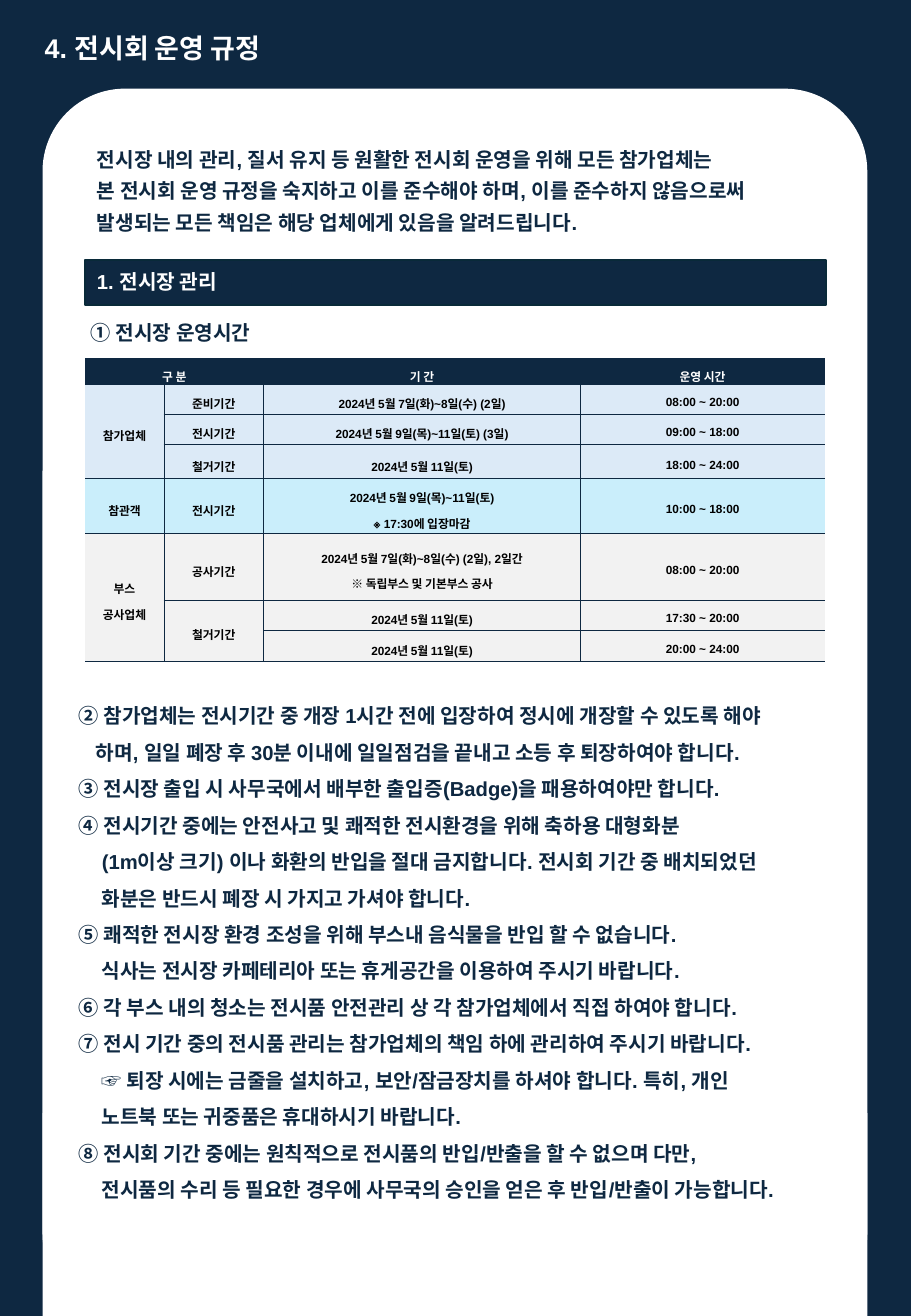
import pptx
import pptx.dml.color
import pptx.enum.shapes
import pptx.enum.text
import pptx.oxml
import pptx.oxml.ns
import pptx.util

Inches = pptx.util.Inches
Shape = pptx.enum.shapes.MSO_SHAPE
COLORS = {
    "navy": "0E2841",
    "bar_line": "092A39",
    "white": "FFFFFF",
    "black": "000000",
    "exhibitor": "DCEAF7",
    "visitor": "CAEEFB",
    "builder": "F2F2F2",
}
INTRO = [
    "전시장 내의 관리, 질서 유지 등 원활한 전시회 운영을 위해 모든 참가업체는",
    "본 전시회 운영 규정을 숙지하고 이를 준수해야 하며, 이를 준수하지 않음으로써",
    "발생되는 모든 책임은 해당 업체에게 있음을 알려드립니다.",
]
RULES = [
    ("② 참가업체는 전시기간 중 개장 1시간 전에 입장하여 정시에 개장할 수 있도록 해야", 0),
    ("하며, 일일 폐장 후 30분 이내에 일일점검을 끝내고 소등 후 퇴장하여야 합니다.", 0.14),
    ("③ 전시장 출입 시 사무국에서 배부한 출입증(Badge)을 패용하여야만 합니다.", 0),
    ("④ 전시기간 중에는 안전사고 및 쾌적한 전시환경을 위해 축하용 대형화분", 0),
    ("(1m이상 크기) 이나 화환의 반입을 절대 금지합니다. 전시회 기간 중 배치되었던", 0.19),
    ("화분은 반드시 폐장 시 가지고 가셔야 합니다.", 0.19),
    ("⑤ 쾌적한 전시장 환경 조성을 위해 부스내 음식물을 반입 할 수 없습니다.", 0),
    ("식사는 전시장 카페테리아 또는 휴게공간을 이용하여 주시기 바랍니다.", 0.19),
    ("⑥ 각 부스 내의 청소는 전시품 안전관리 상 각 참가업체에서 직접 하여야 합니다.", 0),
    ("⑦ 전시 기간 중의 전시품 관리는 참가업체의 책임 하에 관리하여 주시기 바랍니다.", 0),
    ("☞ 퇴장 시에는 금줄을 설치하고, 보안/잠금장치를 하셔야 합니다. 특히, 개인", 0.19),
    ("노트북 또는 귀중품은 휴대하시기 바랍니다.", 0.19),
    ("⑧ 전시회 기간 중에는 원칙적으로 전시품의 반입/반출을 할 수 없으며 다만,", 0),
    ("전시품의 수리 등 필요한 경우에 사무국의 승인을 얻은 후 반입/반출이 가능합니다.", 0.19),
]
COLUMN_WIDTHS = [0.65, 0.82, 2.61, 2.01]
ROW_HEIGHTS = [0.21, 0.25, 0.25, 0.28, 0.45, 0.55, 0.25, 0.25]
ROW_FILLS = ["navy"] + ["exhibitor"] * 3 + ["visitor"] + ["builder"] * 3
MERGES = [((0, 0), (0, 1)), ((1, 0), (3, 0)), ((5, 0), (7, 0)), ((6, 1), (7, 1))]
SCHEDULE = [
    ["구 분", "", "기 간", "운영 시간"],
    ["참가업체", "준비기간", "2024년 5월 7일(화)~8일(수) (2일)", "08:00 ~ 20:00"],
    ["", "전시기간", "2024년 5월 9일(목)~11일(토) (3일)", "09:00 ~ 18:00"],
    ["", "철거기간", "2024년 5월 11일(토)", "18:00 ~ 24:00"],
    ["참관객", "전시기간", "2024년 5월 9일(목)~11일(토)\n※ 17:30에 입장마감", "10:00 ~ 18:00"],
    ["부스\n공사업체", "공사기간",
     "2024년 5월 7일(화)~8일(수) (2일), 2일간\n※ 독립부스 및 기본부스 공사", "08:00 ~ 20:00"],
    ["", "철거기간", "2024년 5월 11일(토)", "17:30 ~ 20:00"],
    ["", "", "2024년 5월 11일(토)", "20:00 ~ 24:00"],
]


def apply(target, values):
    for name, value in values.items():
        setattr(target, name, value)


class RegulationSlide:
    font = {"name": "Arial", "bold": True}
    cell_format = {
        "vertical_anchor": pptx.enum.text.MSO_ANCHOR.MIDDLE,
        "margin_left": Inches(0.04),
        "margin_right": Inches(0.04),
        "margin_top": Inches(0.01),
        "margin_bottom": Inches(0.01),
    }

    def __init__(self, presentation):
        self.slide = presentation.slides.add_slide(presentation.slide_layouts[6])

    def color(self, name):
        return pptx.dml.color.RGBColor.from_string(COLORS[name])

    def fill(self, target, name):
        target.fill.solid()
        target.fill.fore_color.rgb = self.color(name)

    def box(self, kind, bounds, fill, corner=None, line=None):
        shape = self.slide.shapes.add_shape(kind, *map(Inches, bounds))
        shape.shadow.inherit = False
        self.fill(shape, fill)
        if corner is not None:
            shape.adjustments[0] = corner
        if line:
            shape.line.color.rgb = self.color(line)
            shape.line.width = pptx.util.Pt(1.5)
        else:
            shape.line.fill.background()

    def add_lines(self, frame, lines, size, color, **paragraph_format):
        for index, (words, indent) in enumerate(lines):
            paragraph = frame.add_paragraph() if index else frame.paragraphs[0]
            apply(paragraph, paragraph_format)
            if indent:
                properties = paragraph._p.get_or_add_pPr()
                properties.set("marL", str(Inches(indent)))
                properties.set("indent", "0")
            run = paragraph.add_run()
            run.text = words
            apply(run.font, self.font)
            run.font.size = pptx.util.Pt(size)
            run.font.color.rgb = self.color(color)

    def text(self, bounds, lines, color="navy", size=12, spacing=1.0):
        frame = self.slide.shapes.add_textbox(*map(Inches, bounds)).text_frame
        apply(frame, {
            "word_wrap": False,
            "auto_size": pptx.enum.text.MSO_AUTO_SIZE.SHAPE_TO_FIT_TEXT,
        })
        self.add_lines(frame, lines, size, color, line_spacing=spacing)

    def border(self, cell, sides):
        properties = cell._tc.get_or_add_tcPr()
        for side in ("L", "R", "T", "B"):
            paint = "<a:noFill/>"
            if side in sides:
                paint = f'<a:solidFill><a:srgbClr val="{COLORS["navy"]}"/></a:solidFill>'
            properties.append(pptx.oxml.parse_xml(
                f'<a:ln{side} {pptx.oxml.ns.nsdecls("a")} w="6350">{paint}</a:ln{side}>'))

    def table(self, bounds, rows):
        last = len(COLUMN_WIDTHS) - 1
        table = self.slide.shapes.add_table(
            len(rows), last + 1, *map(Inches, bounds)).table
        apply(table, {"first_row": False, "horz_banding": False})
        for column, width in zip(table.columns, COLUMN_WIDTHS):
            column.width = Inches(width)
        for row, height in zip(table.rows, ROW_HEIGHTS):
            row.height = Inches(height)
        for start, end in MERGES:
            table.cell(*start).merge(table.cell(*end))
        for row_index, row in enumerate(rows):
            for column_index, words in enumerate(row):
                cell = table.cell(row_index, column_index)
                apply(cell, self.cell_format)
                sides = "TB" + "L" * (column_index > 0) + "R" * (column_index < last)
                self.border(cell, sides)
                self.fill(cell, ROW_FILLS[row_index])
                if words:
                    self.add_lines(
                        cell.text_frame, [(line, 0) for line in words.split("\n")],
                        7, "black" if row_index else "white", line_spacing=1.5,
                        alignment=pptx.enum.text.PP_ALIGN.CENTER)


def main():
    presentation = pptx.Presentation()
    apply(presentation, {"slide_width": Inches(7.5), "slide_height": Inches(10.83)})
    page = RegulationSlide(presentation)
    page.box(Shape.RECTANGLE, (0, 0, 7.5, 10.83), "navy")
    page.box(Shape.ROUNDED_RECTANGLE, (0.35, 0.73, 6.79, 10.1), "white", corner=0.1)
    page.box(Shape.ROUNDED_RECTANGLE, (0.35, 9.16, 6.79, 1.67), "white", corner=0)
    page.text((0.27, 0.21, 2.2, 0.37), [("4. 전시회 운영 규정", 0)], "white", size=16)
    page.text((0.7, 1.1, 6.28, 0.86), [(line, 0) for line in INTRO], spacing=1.3)
    page.box(Shape.RECTANGLE, (0.7, 2.14, 6.1, 0.37), "navy", line="bar_line")
    page.text((0.7, 2.17, 1.29, 0.3), [("1. 전시장 관리", 0)], "white")
    page.text((0.65, 2.59, 1.73, 0.3), [("① 전시장 운영시간", 0)])
    page.table((0.7, 2.95, 6.1, 2.5), SCHEDULE)
    page.text((0.55, 5.64, 6.77, 4.61), RULES, spacing=1.5)
    presentation.save("out.pptx")


if __name__ == "__main__":
    main()
